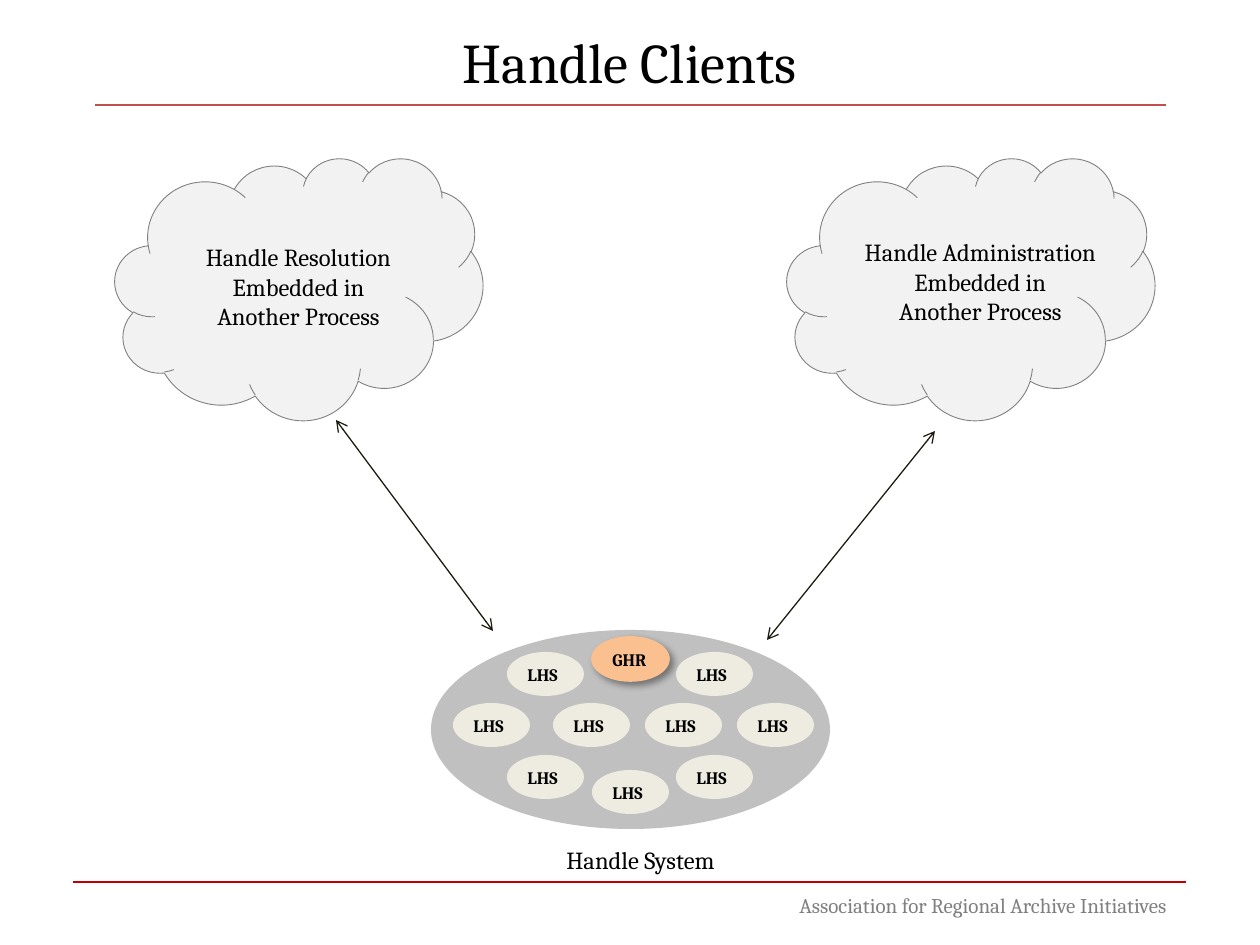
"""Build the Handle Clients slide: two client clouds linked to the Handle System."""
from lxml.etree import SubElement
from pptx import Presentation
from pptx.dml.color import RGBColor
from pptx.enum.shapes import MSO_CONNECTOR, MSO_SHAPE
from pptx.enum.text import MSO_ANCHOR, MSO_AUTO_SIZE, PP_ALIGN
from pptx.oxml import parse_xml
from pptx.oxml.ns import nsdecls, qn
from pptx.util import Emu, Pt

TITLE = "Handle Clients"
FOOTER = "Association for Regional Archive Initiatives"
SYSTEM = "Handle System"
FONT = "Cambria"
CLOUD_TOP, CLOUD_W, CLOUD_H = 158, 368, 262
CLIENTS = [
    {"left": 787, "text": (847, 237, 267, 89), "first": "Handle Administration",
     "arrow": (935, 431, 767, 640)},
    {"left": 115, "text": (189, 242, 219, 89), "first": "Handle Resolution",
     "arrow": (336, 420, 493, 631)},
]
SHARED_LINES = ["Embedded in", "Another Process"]
RULES = [((73, 882, 1186, 882), "C00000"), ((95, 105, 1166, 105), "C0504D")]
SYSTEM_OVAL = (431, 630, 399, 199)
NODE_W, NODE_H = 77, 44
LHS_ROWS = [(652, [507, 676]), (703, [453, 553, 645, 737]),
            (755, [507, 676]), (770, [592])]
GHR = (592, 637)


def px(n):
    return Emu(round(n * 914400 / 126))


def rgb(value):
    return RGBColor.from_string(value)


def style(p, size, color="000000", bold=False, align=PP_ALIGN.LEFT):
    p.alignment = align
    p.font.name, p.font.size, p.font.bold = FONT, Pt(size), bold
    p.font.color.rgb = rgb(color)


def add_shape(shapes, kind, box, fill, line=None, width=1):
    sp = shapes.add_shape(kind, *map(px, box))
    sp.shadow.inherit = False
    sp.fill.solid()
    sp.fill.fore_color.rgb = rgb(fill)
    if line:
        sp.line.color.rgb = rgb(line)
        sp.line.width = Pt(width)
    else:
        sp.line.fill.background()
    return sp


def add_text(shapes, box, lines, size, wrap=False, middle=False, **font):
    tf = shapes.add_textbox(*map(px, box)).text_frame
    tf.word_wrap = wrap
    tf.auto_size = MSO_AUTO_SIZE.SHAPE_TO_FIT_TEXT
    if middle:
        tf.vertical_anchor = MSO_ANCHOR.MIDDLE
        tf.margin_top = tf.margin_bottom = 0
    tf.text = "\n".join(lines)
    for p in tf.paragraphs:
        style(p, size, **font)


def add_line(shapes, ends, color, arrows=False):
    line = shapes.add_connector(MSO_CONNECTOR.STRAIGHT, *map(px, ends))
    line.line.color.rgb = rgb(color)
    line.line.width = Pt(0.75)
    if arrows:
        for tag in ("a:headEnd", "a:tailEnd"):
            SubElement(line.line._get_or_add_ln(), qn(tag), type="arrow")
    SubElement(line._element.spPr, qn("a:effectLst"))


def add_node(shapes, left, top, label, fill, label_w, line=None):
    sp = add_shape(shapes, MSO_SHAPE.OVAL, (left, top, NODE_W, NODE_H), fill, line)
    add_text(shapes, (left + 8, top + 12, label_w, 21), [label], 10,
             middle=True, bold=True)
    return sp


def add_shadow(sp):
    effects = sp._element.spPr.find(qn("a:effectLst"))
    effects.append(parse_xml(
        f'<a:outerShdw {nsdecls("a")} blurRad="{Pt(4)}" dist="{Pt(3)}" dir="2700000">'
        '<a:srgbClr val="000000"><a:alpha val="40000"/></a:srgbClr></a:outerShdw>'))


def main():
    prs = Presentation()
    prs.slide_width, prs.slide_height = px(1260), px(945)
    s = prs.slides.add_slide(prs.slide_layouts[5])
    title = s.shapes.title
    title.left, title.top, title.width, title.height = map(px, (63, 21, 1134, 105))
    title.text_frame.text = TITLE
    title.text_frame.vertical_anchor = MSO_ANCHOR.TOP
    style(title.text_frame.paragraphs[0], 32, align=PP_ALIGN.CENTER)

    for ends, color in RULES:
        add_line(s.shapes, ends, color)
    add_text(s.shapes, (787, 886, 407, 38), [FOOTER], 12, wrap=True, color="808080")

    system = s.shapes.add_group_shape().shapes
    add_shape(system, MSO_SHAPE.OVAL, SYSTEM_OVAL, "C0C0C0")
    for top, lefts in LHS_ROWS:
        for left in lefts:
            add_node(system, left, top, "LHS", "EEECE1", 57)
    add_shadow(add_node(system, *GHR, "GHR", "FAC090", 62, line="FAC090"))
    add_text(s.shapes, (554, 839, 181, 43), [SYSTEM], 14)

    for client in CLIENTS:
        add_line(s.shapes, client["arrow"], "1E1C11", arrows=True)
        add_shape(s.shapes, MSO_SHAPE.CLOUD,
                  (client["left"], CLOUD_TOP, CLOUD_W, CLOUD_H), "F2F2F2", "808080", 0.5)
        add_text(s.shapes, client["text"], [client["first"], *SHARED_LINES], 14,
                 middle=True, align=PP_ALIGN.CENTER)
    prs.save("out.pptx")


if __name__ == "__main__":
    main()
